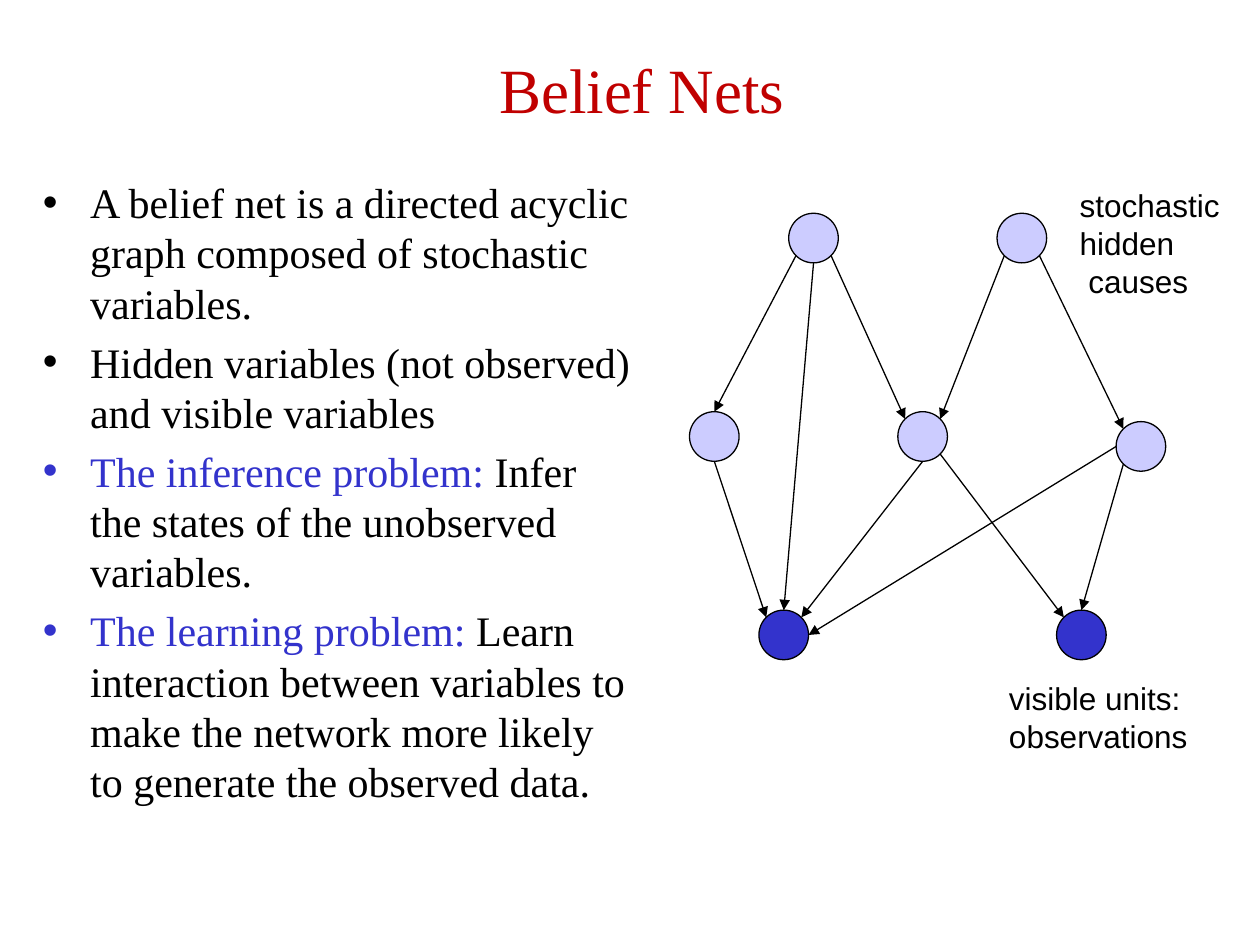
"""Build the Belief Nets slide: bullets on the left, a directed graph on the right."""
from dataclasses import dataclass
from math import cos, radians, sin

from lxml.etree import SubElement
from pptx import Presentation
from pptx.dml.color import RGBColor
from pptx.enum.shapes import MSO_CONNECTOR, MSO_SHAPE
from pptx.enum.text import MSO_ANCHOR, MSO_AUTO_SIZE, PP_ALIGN
from pptx.oxml.ns import qn
from pptx.util import Inches, Mm, Pt


@dataclass(frozen=True)
class Theme:
    """Colours, fonts and type sizes of the slide."""
    ink: str = "000000"
    red: str = "C00000"
    blue: str = "3333CC"
    pale: str = "CCCCFF"
    serif: str = "Times New Roman"
    sans: str = "Arial"
    lead: int = 44
    title: int = 36
    body: int = 24
    label: int = 18
    line: float = 0.75


THEME = Theme()
UNIT = Mm(2)
SIZE = 5

TITLE = [(" ", THEME.lead, THEME.ink), ("Belief Nets ", THEME.title, THEME.red)]
ITEMS = [
    ("", "A belief net is a directed acyclic graph composed of stochastic variables."),
    ("", "Hidden variables (not observed) and visible variables"),
    ("The inference problem:", " Infer the states of the unobserved variables."),
    ("The learning problem: ", "Learn interaction between variables to make the "
     "network more likely to generate the observed data."),
]
NODES = {
    "cause1": (82, 24, THEME.pale),
    "cause2": (103, 24, THEME.pale),
    "mid1": (72, 44, THEME.pale),
    "mid2": (93, 44, THEME.pale),
    "mid3": (115, 45, THEME.pale),
    "seen1": (79, 64, THEME.blue),
    "seen2": (109, 64, THEME.blue),
}
ANGLES = {"E": 0, "SE": 45, "S": 90, "SW": 135, "W": 180, "NW": 225, "N": 270, "NE": 315}
EDGES = [
    ("cause1", "SW", "mid1", "N"),
    ("cause1", "S", "seen1", "N"),
    ("cause1", "SE", "mid2", "NW"),
    ("cause2", "SW", "mid2", "NE"),
    ("cause2", "SE", "mid3", "NW"),
    ("mid1", "S", "seen1", "NW"),
    ("mid2", "S", "seen1", "NE"),
    ("mid2", "SE", "seen2", "NW"),
    ("mid3", "W", "seen1", "E"),
    ("mid3", "SW", "seen2", "N"),
]
LABELS = [
    ((8.47, 1.43, 1.38, 1), True, ["stochastic", "hidden causes"]),
    ((7.91, 5.34, 1.63, 0.71), False, ["visible units:", "observations"]),
]


def place(shape, box):
    shape.left, shape.top, shape.width, shape.height = map(Inches, box)


def style(run, size, color, face):
    run.font.size = Pt(size)
    run.font.name = face
    run.font.color.rgb = RGBColor.from_string(color)


def write(para, text, size, color, face):
    run = para.add_run()
    run.text = text
    style(run, size, color, face)


def add_title(slide):
    shape = slide.shapes.title
    place(shape, (0.58, 0.03, 9, 1.25))
    shape.text_frame.vertical_anchor = MSO_ANCHOR.MIDDLE
    para = shape.text_frame.paragraphs[0]
    para.alignment = PP_ALIGN.CENTER
    for text, size, color in TITLE:
        write(para, text, size, color, THEME.serif)


def add_body(slide):
    shape = slide.placeholders[1]
    place(shape, (0.24, 1.35, 4.88, 6.15))
    frame = shape.text_frame
    frame.auto_size = MSO_AUTO_SIZE.NONE
    for row, (head, rest) in enumerate(ITEMS):
        para = frame.add_paragraph() if row else frame.paragraphs[0]
        for text, color in ((head, THEME.blue), (rest, THEME.ink)):
            if text:
                write(para, text, THEME.body, color, THEME.serif)


def add_node(slide, x, y, color):
    half = SIZE / 2
    node = slide.shapes.add_shape(
        MSO_SHAPE.OVAL, int((x - half) * UNIT), int((y - half) * UNIT),
        SIZE * UNIT, SIZE * UNIT)
    node.shadow.inherit = False
    node.fill.solid()
    node.fill.fore_color.rgb = RGBColor.from_string(color)
    node.line.color.rgb = RGBColor.from_string(THEME.ink)
    node.line.width = Pt(THEME.line)


def rim(name, side):
    x, y, _ = NODES[name]
    turn = radians(ANGLES[side])
    return (int((x + SIZE / 2 * cos(turn)) * UNIT),
            int((y + SIZE / 2 * sin(turn)) * UNIT))


def add_edge(slide, start, out, end, into):
    edge = slide.shapes.add_connector(
        MSO_CONNECTOR.STRAIGHT, *rim(start, out), *rim(end, into))
    edge.line.color.rgb = RGBColor.from_string(THEME.ink)
    edge.line.width = Pt(THEME.line)
    SubElement(edge.line._get_or_add_ln(), qn("a:tailEnd"), type="triangle")
    SubElement(edge._element.spPr, qn("a:effectLst"))


def add_label(slide, box, wrap, lines):
    frame = slide.shapes.add_textbox(*map(Inches, box)).text_frame
    frame.text = "\n".join(lines)
    frame.word_wrap = wrap
    frame.auto_size = MSO_AUTO_SIZE.SHAPE_TO_FIT_TEXT
    for para in frame.paragraphs:
        style(para.runs[0], THEME.label, THEME.ink, THEME.sans)
    if wrap:
        props = frame.paragraphs[-1]._p.get_or_add_pPr()
        props.set("marL", str(Inches(0.07)))
        props.set("indent", str(-Inches(0.07)))


def main():
    deck = Presentation()
    deck.slide_width, deck.slide_height = Inches(10), Inches(7.5)
    slide = deck.slides.add_slide(deck.slide_layouts[1])
    add_title(slide)
    add_body(slide)
    for node in NODES.values():
        add_node(slide, *node)
    for edge in EDGES:
        add_edge(slide, *edge)
    for label in LABELS:
        add_label(slide, *label)
    deck.save("out.pptx")


if __name__ == "__main__":
    main()
